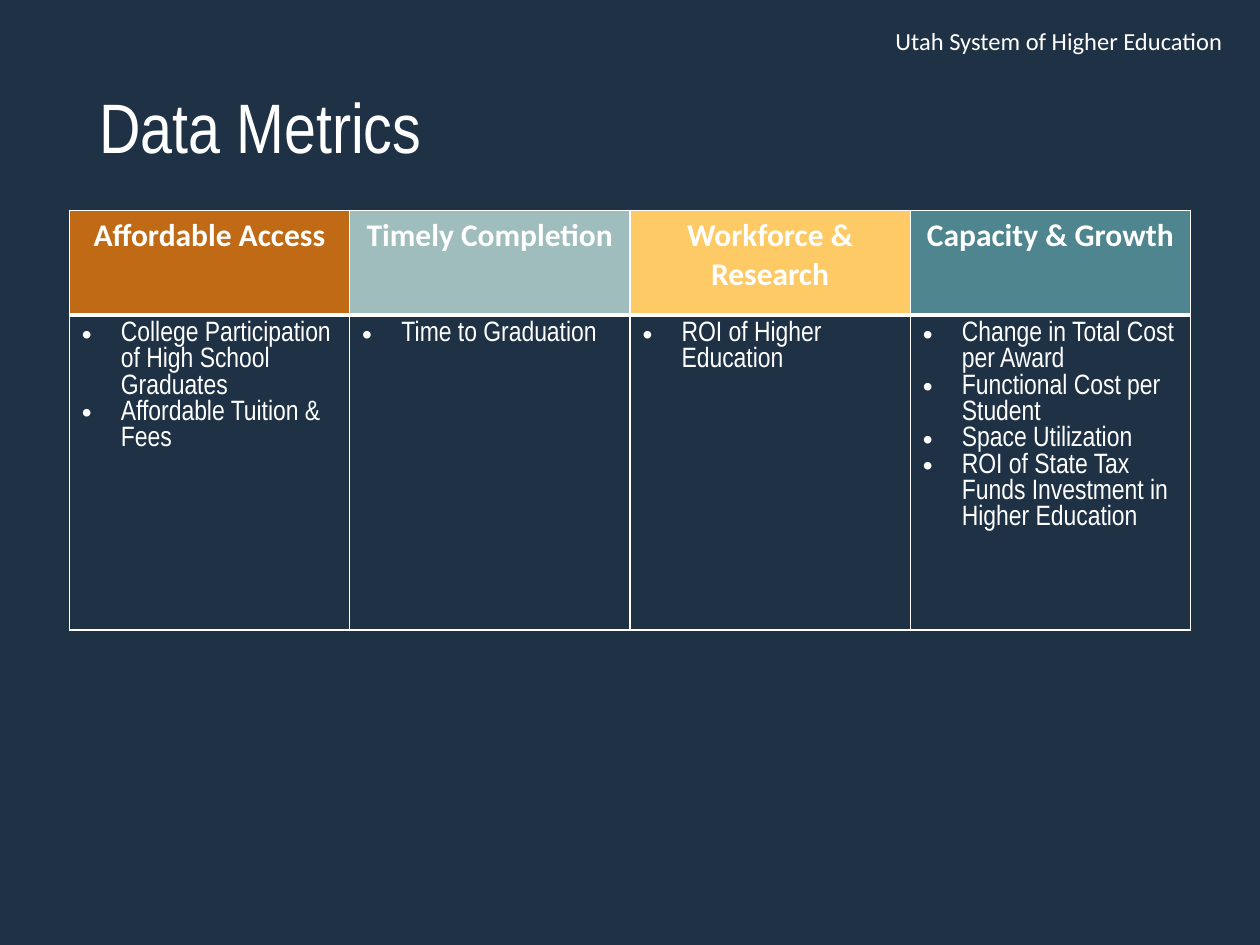
from pptx import Presentation
from pptx.dml.color import RGBColor
from pptx.enum.text import MSO_ANCHOR, MSO_AUTO_SIZE, PP_ALIGN
from pptx.oxml.ns import qn
from pptx.util import Inches, Pt
from lxml import etree

LEFT, CENTER, RIGHT = PP_ALIGN.LEFT, PP_ALIGN.CENTER, PP_ALIGN.RIGHT
MIDDLE = MSO_ANCHOR.MIDDLE
NO_FIT = MSO_AUTO_SIZE.NONE

NAVY = RGBColor(0x1F, 0x31, 0x45)
WHITE = RGBColor(0xFF, 0xFF, 0xFF)
ORANGE = RGBColor(0xC1, 0x6A, 0x16)
SAGE = RGBColor(0x9F, 0xBD, 0xBC)
YELLOW = RGBColor(0xFD, 0xCA, 0x65)
TEAL = RGBColor(0x4F, 0x85, 0x8E)

METRICS = [
    ("Affordable Access", ORANGE,
     ["College Participation of High School Graduates",
      "Affordable Tuition & Fees"]),
    ("Timely Completion", SAGE, ["Time to Graduation"]),
    ("Workforce & Research", YELLOW, ["ROI of Higher Education"]),
    ("Capacity & Growth", TEAL,
     ["Change in Total Cost per Award", "Functional Cost per Student",
      "Space Utilization",
      "ROI of State Tax Funds Investment in Higher Education"]),
]


class Deck:
    HEAD_FONT = "Calibri"
    BODY_FONT = "Arial Narrow"

    def __init__(self):
        self.prs = Presentation()
        self.prs.slide_width, self.prs.slide_height = Inches(10), Inches(7.5)
        self.s = self.prs.slides.add_slide(self.prs.slide_layouts[5])
        fill = self.s.background.fill
        fill.solid()
        fill.fore_color.rgb = NAVY

    def style(self, p, font, size, align=LEFT, bold=False):
        p.alignment = align
        for r in p.runs:
            r.font.name, r.font.size, r.font.bold = font, Pt(size), bold
            r.font.color.rgb = WHITE

    def place(self, sp, x, y, w, h):
        sp.left, sp.top, sp.width, sp.height = map(Inches, (x, y, w, h))

    def title(self, text, *box):
        sp = self.s.shapes.title
        self.place(sp, *box)
        tf = sp.text_frame
        tf.text = text
        tf.auto_size, tf.vertical_anchor = NO_FIT, MIDDLE
        tf.paragraphs[0].line_spacing = 0.9
        self.style(tf.paragraphs[0], self.BODY_FONT, 40)

    def label(self, text, *box):
        tf = self.s.shapes.add_textbox(*map(Inches, box)).text_frame
        tf.word_wrap = True
        tf.text = text
        self.style(tf.paragraphs[0], self.HEAD_FONT, 14, RIGHT)

    def bullet(self, p):
        pPr = p._p.get_or_add_pPr()
        pPr.set("marL", str(Inches(0.31)))
        pPr.set("indent", str(-Inches(0.31)))
        etree.SubElement(pPr, qn("a:buFont")).set("typeface", "Arial")
        etree.SubElement(pPr, qn("a:buChar")).set("char", "•")

    def borders(self, cell, top, bottom):
        tcPr = cell._tc.get_or_add_tcPr()
        for side, width in zip("LRTB", (1, 1, top, bottom)):
            ln = etree.SubElement(tcPr, qn("a:ln" + side), w=str(Pt(width)))
            fill = etree.SubElement(ln, qn("a:solidFill"))
            etree.SubElement(fill, qn("a:srgbClr"), val=str(WHITE))

    def table(self, columns, row_heights, *box):
        table = self.s.shapes.add_table(
            len(row_heights), len(columns), *map(Inches, box)).table
        table.horz_banding = False
        for row, height in zip(table.rows, row_heights):
            row.height = Inches(height)
        for i, (heading, color, items) in enumerate(columns):
            # Coloured heading
            head = table.cell(0, i)
            self.borders(head, 1, 3)
            head.fill.solid()
            head.fill.fore_color.rgb = color
            head.text = heading
            self.style(head.text_frame.paragraphs[0], self.HEAD_FONT, 18,
                       CENTER, True)
            # Bulleted metrics
            body = table.cell(1, i)
            self.borders(body, 3, 1)
            body.fill.background()
            body.text = "\n".join(items)
            for p in body.text_frame.paragraphs:
                self.bullet(p)
                self.style(p, self.BODY_FONT, 16)


def main():
    deck = Deck()
    deck.label("Utah System of Higher Education", 4.05, 0.16, 5.75, 0.34)
    deck.title("Data Metrics", 0.69, 0.58, 8.62, 0.92)
    deck.table(METRICS, (0.83, 2.5), 0.55, 1.67, 8.9, 3.33)
    deck.prs.save("out.pptx")


if __name__ == "__main__":
    main()
